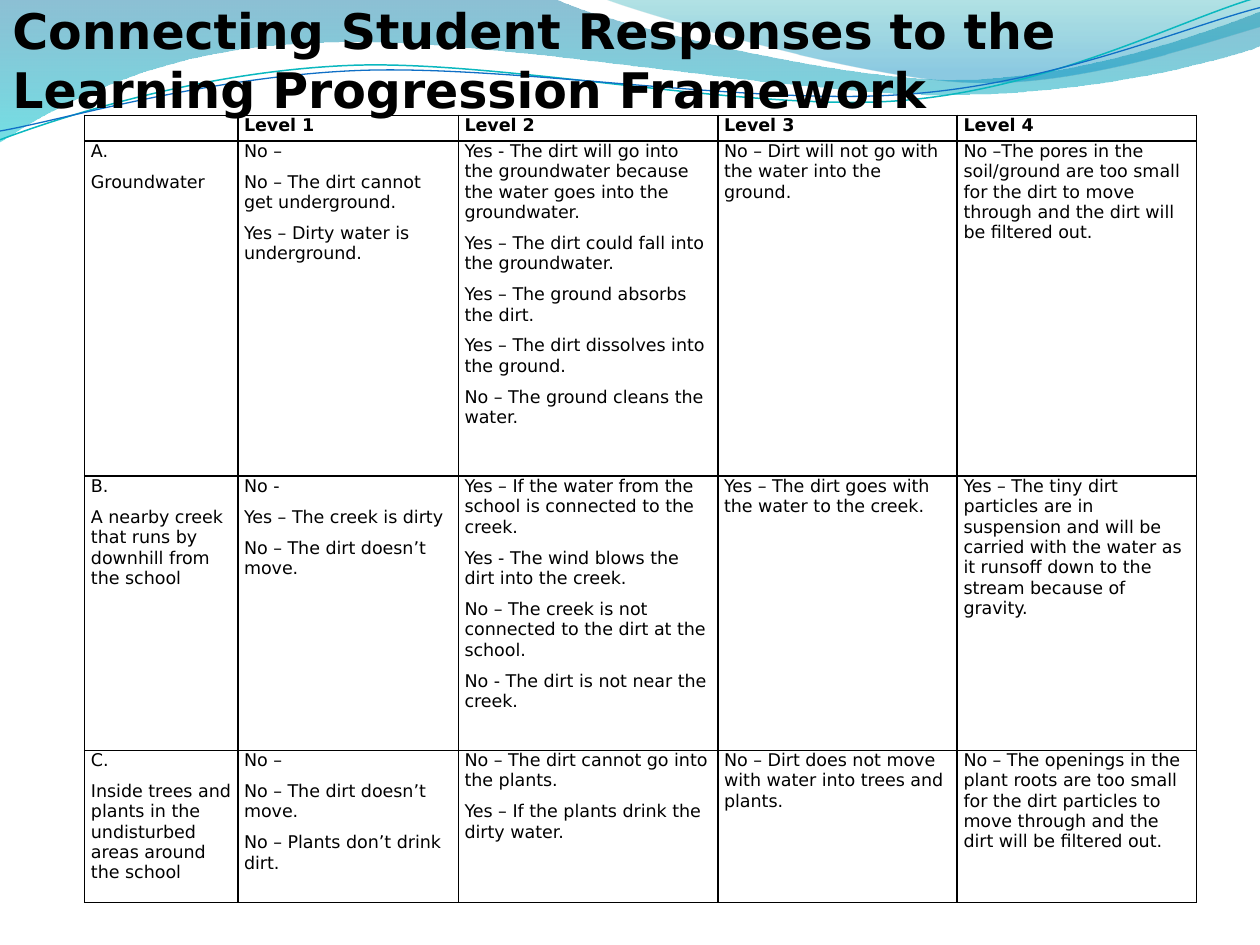
from math import cos, radians, sin

from lxml import etree
from pptx import Presentation
from pptx.dml.color import RGBColor
from pptx.enum.text import MSO_ANCHOR, MSO_AUTO_SIZE
from pptx.oxml.ns import qn
from pptx.util import Inches, Pt

MIDDLE = MSO_ANCHOR.MIDDLE
GROW = MSO_AUTO_SIZE.SHAPE_TO_FIT_TEXT
THEME = {
    "font": "DejaVu Sans",
    "ink": "000000",
    "title": Pt(28),
    "body": Pt(10),
    "gap": Pt(6),
    "rule": Pt(1),
}
TILT = 357.3

deck = Presentation()
deck.slide_width, deck.slide_height = Inches(10), Inches(7.5)
COL, ROW = deck.slide_width / 100, deck.slide_height / 75
slide = deck.slides.add_slide(deck.slide_layouts[6])


def trace(box, start, parts, closed, turn=0):
    left, top, width, height = box
    mid_x, mid_y = left + width / 2, top + height / 2
    c, s = cos(radians(-turn)), sin(radians(-turn))

    def place(x, y):
        dx, dy = x - mid_x, y - mid_y
        return (round((dx * c - dy * s + width / 2) * COL),
                round((dx * s + dy * c + height / 2) * ROW))

    pen = slide.shapes.build_freeform(*place(*start), scale=1.0)
    pen.add_line_segments([place(*part[-2:]) for part in parts], close=closed)
    shape = pen.convert_to_shape()
    shape.shadow.inherit = False
    shape.left, shape.top = round(left * COL), round(top * ROW)
    shape.width, shape.height = round(width * COL), round(height * ROW)
    shape.rotation = turn

    path = next(shape._element.iter(qn("a:path")))
    for child in list(path):
        path.remove(child)
    path.set("w", str(shape.width))
    path.set("h", str(shape.height))
    for part in [start, *parts]:
        kind = "moveTo" if part is start else "lnTo" if len(part) == 2 else "cubicBezTo"
        move = etree.SubElement(path, qn("a:" + kind))
        for spot in zip(part[::2], part[1::2]):
            x, y = place(*spot)
            etree.SubElement(move, qn("a:pt"), x=str(x), y=str(y))
    if closed:
        etree.SubElement(path, qn("a:close"))
    return shape


def style(para, size, bold):
    font = para.font
    font.name, font.size, font.bold = THEME["font"], size, bold
    font.color.rgb = RGBColor.from_string(THEME["ink"])


WAVES = [
    ((-0.1, -0.1, 100.2, 11.4), (0, 0),
     [(44, -0.1), (47.6, 1.7, 66.4, 6.3, 75.8, 6.3), (85.3, 6.3, 95.8, 2.6, 100, 0.9),
      (100.1, 3.6), (98.3, 4.4, 87, 7.6, 74.6, 7.5), (62.2, 7.5, 38.2, 2.8, 25.7, 3.4),
      (12.9, 3.6, 4.6, 8.3, -0.1, 11.3), (0, 0)],
     [(0, "0074A1", 45), (1, "00C6CF", 55)]),
    ((47.9, -0.1, 52.1, 7), (47.9, -0.1),
     [(50.9, 1.1, 68.2, 6.2, 76.9, 6.5), (85.6, 6.9, 96.1, 3.2, 100, 2.1),
      (100, 0), (47.9, -0.1)],
     [(0, "00A1A9", 30), (0.8, "008BBF", 45)]),
]
for box, start, parts, stops in WAVES:
    wave = trace(box, start, parts, True)
    wave.line.fill.background()
    wave.fill.gradient()
    wave.fill.gradient_angle = 270
    for stop, (spot, shade, share) in zip(wave.fill.gradient_stops, stops):
        stop.position = spot
        stop.color.rgb = RGBColor.from_string(shade)
    tints = wave._element.spPr.iter(qn("a:srgbClr"))
    for tint, (spot, shade, share) in zip(tints, stops):
        etree.SubElement(tint, qn("a:alpha"), val=str(share * 1000))

CURVES = [
    ((-0.2, 2.2, 100.2, 7.1), (0, 11.1),
     [(4.8, 9.3, 15.8, 5.7, 27.7, 5.2), (39.5, 4.7, 59.3, 8.9, 71.3, 8),
      (83.3, 7.1, 93.8, 1.5, 99.8, -0.2)],
     "0AB8BF", 0.85),
    ((-0.2, 3, 100.3, 5.8), (0, 10.4),
     [(4.7, 9.6, 16.4, 6.1, 28.3, 5.6), (40.3, 5.1, 59.7, 8.4, 71.7, 7.5),
      (83.6, 6.7, 94.1, 2.1, 100, 0.6)],
     "0F6FC6", 0.75),
]
for box, start, parts, shade, weight in CURVES:
    curve = trace(box, start, parts, False, TILT)
    curve.fill.background()
    curve.line.color.rgb = RGBColor.from_string(shade)
    curve.line.width = Pt(weight)

CELLS = [
    ["", "Level 1", "Level 2", "Level 3", "Level 4"],
    [
        "A.\nGroundwater",
        "No –\nNo – The dirt cannot get underground.\nYes – Dirty water is underground.",
        "Yes - The dirt will go into the groundwater because the water goes into the groundwater.\n"
        "Yes – The dirt could fall into the groundwater.\n"
        "Yes – The ground absorbs the dirt.\n"
        "Yes – The dirt dissolves into the ground.\n"
        "No – The ground cleans the water.",
        "No – Dirt will not go with the water into the ground.",
        "No –The pores in the soil/ground are too small for the dirt to move through "
        "and the dirt will be filtered out.",
    ],
    [
        "B.\nA nearby creek that runs by downhill from the school",
        "No -\nYes – The creek is dirty\nNo – The dirt doesn’t move.",
        "Yes – If the water from the school is connected to the creek.\n"
        "Yes - The wind blows the dirt into the creek.\n"
        "No – The creek is not connected to the dirt at the school.\n"
        "No - The dirt is not near the creek.",
        "Yes – The dirt goes with the water to the creek.",
        "Yes – The tiny dirt particles are in suspension and will be carried with the water "
        "as it runsoff down to the stream because of gravity.",
    ],
    [
        "C.\nInside trees and plants in the undisturbed areas around the school",
        "No –\nNo – The dirt doesn’t move.\nNo – Plants don’t drink dirt.",
        "No – The dirt cannot go into the plants.\nYes – If the plants drink the dirty water.",
        "No – Dirt does not move with water into trees and plants.",
        "No – The openings in the plant roots are too small for the dirt particles "
        "to move through and the dirt will be filtered out.",
    ],
]
WIDTHS = [12.15, 17.5, 20.6, 19, 19]
HEIGHTS = [2.05, 26.6, 21.75, 12.1]

frame = slide.shapes.add_table(
    len(HEIGHTS), len(WIDTHS), round(6.72 * COL), round(9.15 * ROW),
    round(sum(WIDTHS) * COL), round(sum(HEIGHTS) * ROW))
table = frame.table
table.first_row = table.horz_banding = False
for column, width in zip(table.columns, WIDTHS):
    column.width = round(width * COL)
for row, height, texts in zip(table.rows, HEIGHTS, CELLS):
    row.height = round(height * ROW)
    for cell, text in zip(row.cells, texts):
        cell.margin_left = cell.margin_right = round(COL / 2)
        cell.margin_top = cell.margin_bottom = 0
        cell.text_frame.text = text
        for para in cell.text_frame.paragraphs:
            para.space_before = THEME["gap"]
            style(para, THEME["body"], texts is CELLS[0])
        props = cell._tc.get_or_add_tcPr()
        for side in "LRTB":
            edge = etree.SubElement(props, qn("a:ln" + side), w=str(THEME["rule"]))
            fill = etree.SubElement(edge, qn("a:solidFill"))
            etree.SubElement(fill, qn("a:srgbClr"), val=THEME["ink"])
        cell.fill.background()

title = slide.shapes.add_textbox(0, round(-0.5 * ROW), round(100 * COL), round(10.4 * ROW))
title.text_frame.word_wrap = True
title.text_frame.auto_size = GROW
title.text_frame.vertical_anchor = MIDDLE
title.text_frame.text = "Connecting Student Responses to the Learning Progression Framework"
style(title.text_frame.paragraphs[0], THEME["title"], True)

deck.save("out.pptx")
